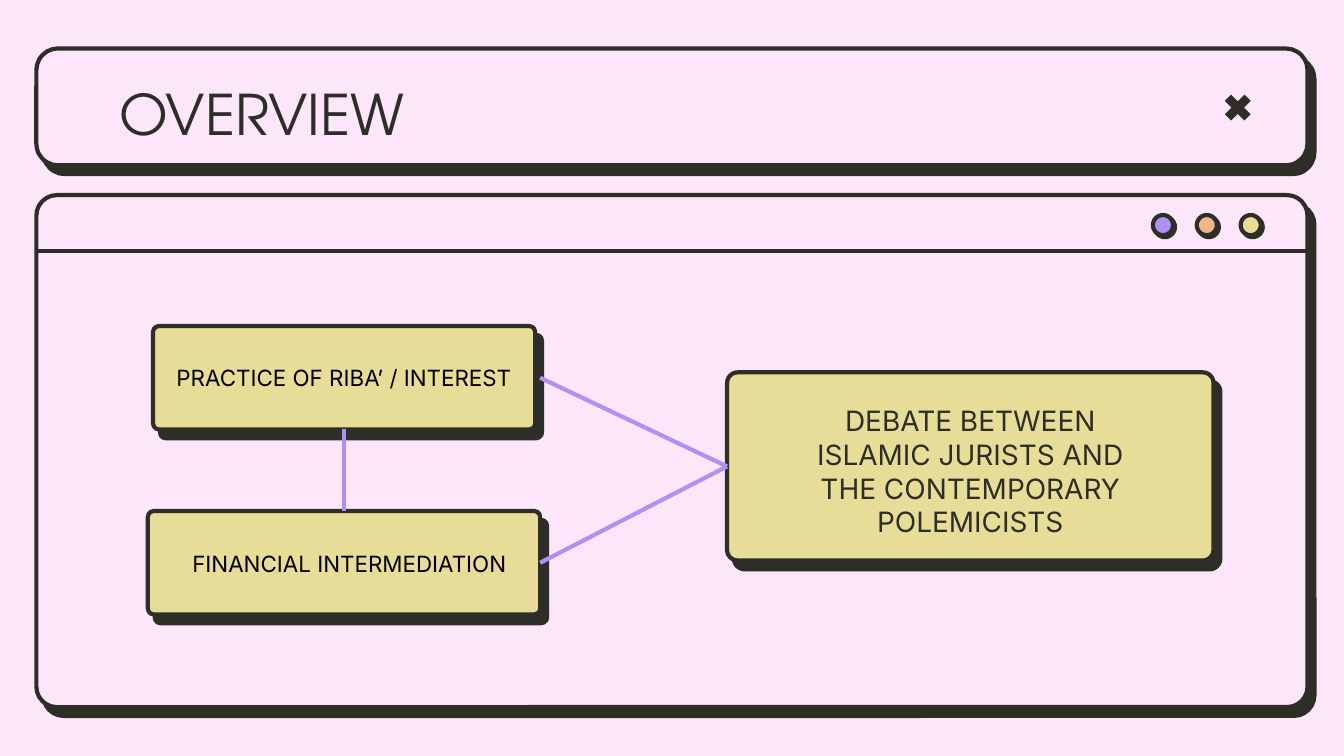
from dataclasses import dataclass

import lxml.etree
import pptx
import pptx.dml.color
import pptx.enum.shapes
import pptx.enum.text
import pptx.oxml.ns
import pptx.util

Pt = pptx.util.Pt
RGBColor = pptx.dml.color.RGBColor
ShapeType = pptx.enum.shapes.MSO_SHAPE
Alignment = pptx.enum.text.PP_ALIGN
Anchor = pptx.enum.text.MSO_ANCHOR


@dataclass(frozen=True)
class Theme:
    pink: str = "FCE6FA"
    ink: str = "2D2E27"
    black: str = "000000"
    yellow: str = "E8DD98"
    orange: str = "F0B589"
    purple: str = "B090F7"
    title_font: str = "TeX Gyre Adventor"
    body_font: str = "Inter"
    title_size: float = 30
    debate_size: float = 15
    label_size: float = 12
    stroke: float = 2.25


theme = Theme()
presentation = pptx.Presentation()
presentation.slide_width = Pt(720)
presentation.slide_height = Pt(405)
slide = presentation.slides.add_slide(presentation.slide_layouts[6])
slide.background.fill.solid()
slide.background.fill.fore_color.rgb = RGBColor.from_string(theme.pink)


def add_card(kind, left, top, width, height, fill, distance=6, angle=52, corner=None):
    shape = slide.shapes.add_shape(kind, Pt(left), Pt(top), Pt(width), Pt(height))
    if corner is not None:
        shape.adjustments[0] = corner
    shape.fill.solid()
    shape.fill.fore_color.rgb = RGBColor.from_string(fill)
    shape.line.color.rgb = RGBColor.from_string(theme.ink)
    shape.line.width = Pt(theme.stroke)
    shape.shadow.inherit = False
    effects = shape._element.spPr.find(pptx.oxml.ns.qn("a:effectLst"))
    shadow = lxml.etree.SubElement(
        effects, pptx.oxml.ns.qn("a:outerShdw"),
        dist=str(Pt(distance)), dir=str(angle * 60000), algn="bl", rotWithShape="0")
    lxml.etree.SubElement(shadow, pptx.oxml.ns.qn("a:srgbClr"), val=theme.ink)


def add_line(start_x, start_y, end_x, end_y, color):
    connector = slide.shapes.add_connector(
        pptx.enum.shapes.MSO_CONNECTOR.STRAIGHT,
        Pt(start_x), Pt(start_y), Pt(end_x), Pt(end_y))
    connector.line.color.rgb = RGBColor.from_string(color)
    connector.line.width = Pt(theme.stroke)
    lxml.etree.SubElement(connector._element.spPr, pptx.oxml.ns.qn("a:effectLst"))


add_card(ShapeType.ROUNDED_RECTANGLE, 19.5, 104.5, 681, 274.3, theme.pink, corner=0.04)
for index, color in enumerate((theme.purple, theme.orange, theme.yellow)):
    add_card(ShapeType.OVAL, 617.6 + 23.5 * index, 115.2, 10.8, 10.8, color, 1.5, 45)
add_line(19.5, 134.6, 700, 134.6, theme.ink)
add_card(ShapeType.ROUNDED_RECTANGLE, 19.5, 26, 681, 62.6, theme.pink, corner=0.186)

close_mark = slide.shapes.add_shape(
    ShapeType.MATH_MULTIPLY, Pt(653), Pt(47.5), Pt(20.2), Pt(20.2))
close_mark.adjustments[0] = 0.235
close_mark.fill.solid()
close_mark.fill.fore_color.rgb = RGBColor.from_string(theme.ink)
close_mark.line.fill.background()
close_mark.shadow.inherit = False

for left, top, width, height in (
    (79.2, 273.8, 210.2, 55.4),
    (389.5, 199.5, 260.6, 100.8),
    (82, 174.7, 204.7, 55.4),
):
    add_card(ShapeType.ROUNDED_RECTANGLE, left, top, width, height, theme.yellow, corner=0.057)

texts = (
    ("OVERVIEW", (56.9, 35.3, 607, 45.4), theme.title_font, theme.title_size,
     theme.ink, Alignment.LEFT, Anchor.TOP),
    ("DEBATE BETWEEN ISLAMIC JURISTS AND THE CONTEMPORARY POLEMICISTS",
     (417.6, 208.1, 204.5, 88.6), theme.body_font, theme.debate_size,
     theme.ink, Alignment.CENTER, Anchor.MIDDLE),
    ("FINANCIAL INTERMEDIATION", (85, 287.3, 204.5, 28.8), theme.body_font,
     theme.label_size, theme.black, Alignment.CENTER, Anchor.MIDDLE),
    ("PRACTICE OF RIBA’ / INTEREST", (79.2, 188, 210.2, 28.8), theme.body_font,
     theme.label_size, theme.black, Alignment.CENTER, Anchor.TOP),
)
for text, bounds, font, size, color, alignment, anchor in texts:
    text_box = slide.shapes.add_textbox(*(Pt(value) for value in bounds))
    frame = text_box.text_frame
    frame.word_wrap = True
    frame.vertical_anchor = anchor
    frame.margin_left = frame.margin_right = Pt(7.2)
    frame.margin_top = frame.margin_bottom = Pt(7.2)
    paragraph = frame.paragraphs[0]
    paragraph.text = text
    paragraph.alignment = alignment
    paragraph.font.name = font
    paragraph.font.size = Pt(size)
    paragraph.font.color.rgb = RGBColor.from_string(color)

for start_x, start_y, end_x, end_y in (
    (184.3, 273.8, 184.3, 230.1),
    (289.4, 202.4, 389.5, 249.9),
    (289.4, 301.5, 389.5, 249.9),
):
    add_line(start_x, start_y, end_x, end_y, theme.purple)

presentation.save("out.pptx")
